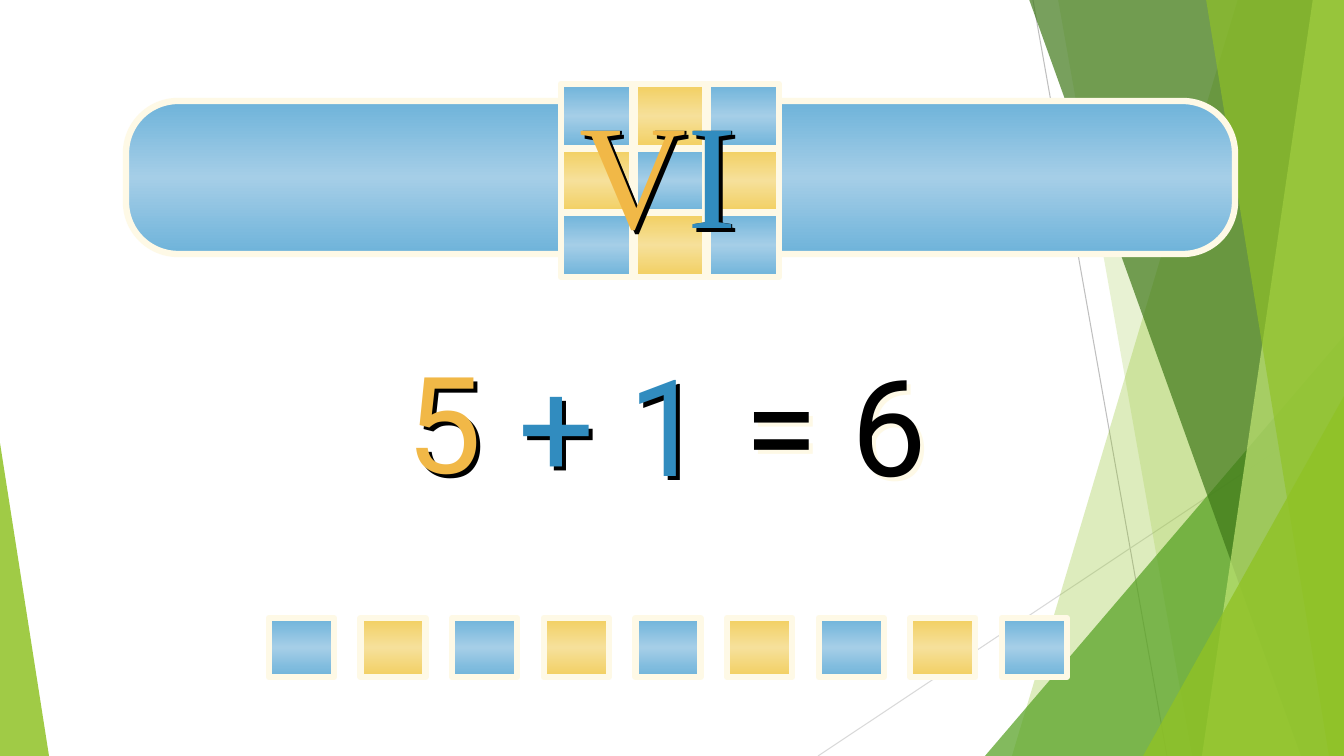
from copy import deepcopy
from lxml.etree import SubElement as Sub
from pptx import Presentation
from pptx.dml.color import RGBColor
from pptx.enum.shapes import MSO_CONNECTOR as Link, MSO_SHAPE as Kind
from pptx.enum.text import MSO_ANCHOR as Anchor, MSO_AUTO_SIZE as Auto, PP_ALIGN as Align
from pptx.oxml.ns import qn
from pptx.util import Emu, Pt

UNIT = 914400 / 100.8
WIDE, HIGH = 1344, 756
BLUE, GOLD = ("6EB3DA", "A5CEE7"), ("F2CF60", "F6E09A")
CREAM, BLACK, AMBER, AZURE = "FEF9E6", "000000", "F1B847", "318CBF"
LIME, GREEN, DARK, PALE = "90C226", "54A021", "3F7819", "C0E474"
SERIF, SANS = "Times New Roman", "Roboto"


def px(*nums):
    """Turn pixel lengths into EMU."""
    return [Emu(round(n * UNIT)) for n in nums]


def hue(code):
    """Turn a hex string into a colour."""
    return RGBColor.from_string(code)


def tint(shape, code, alpha):
    """Give a shape a see-through fill without an outline."""
    shape.shadow.inherit = False
    shape.fill.solid()
    shape.fill.fore_color.rgb = hue(code)
    tone = shape._element.spPr.find(".//" + qn("a:srgbClr"))
    Sub(tone, qn("a:alpha"), val=str(alpha * 1000))
    shape.line.fill.background()


def ray(slide, ends, code):
    """Draw one thin line between two points."""
    line = slide.shapes.add_connector(Link.STRAIGHT, *px(*ends))
    line.line.color.rgb = hue(code)
    line.line.width = Pt(0.75)
    Sub(line._element.spPr, qn("a:effectLst"))


def shard(slide, top, base, code, alpha):
    """Draw a band from a slanted left edge to the right slide edge."""
    pen = slide.shapes.build_freeform(top, -1, scale=UNIT)
    pen.add_line_segments([(WIDE, -1), (WIDE, HIGH), (base, HIGH)], close=True)
    tint(pen.convert_to_shape(), code, alpha)


def wedge(slide, box, tip, code, alpha):
    """Draw a triangle whose tip sits at a share of its width."""
    shape = slide.shapes.add_shape(Kind.ISOSCELES_TRIANGLE, *px(*box))
    shape.adjustments[0] = tip
    tint(shape, code, alpha)


def decor(slide):
    """Draw the green facets along the slide edges."""
    ray(slide, (1033, 0, 1167, HIGH), "BFBFBF")
    ray(slide, (WIDE, 406, 818, HIGH), "D9D9D9")
    shard(slide, 1238, 1012, LIME, 30)
    shard(slide, 1058, 1192, LIME, 20)
    wedge(slide, (985, 336, 359, 420), 1, GREEN, 72)
    shard(slide, 1029, 1301, DARK, 70)
    shard(slide, 1313, 1202, PALE, 70)
    shard(slide, 1206, 1329, LIME, 65)
    wedge(slide, (1143, 396, 201, 360), 1, LIME, 80)
    wedge(slide, (0, 443, 49, 313), 0, LIME, 85)


def tile(slide, kind, box, pair):
    """Draw a glossy shape with a cream outline."""
    shape = slide.shapes.add_shape(kind, *px(*box))
    shape.shadow.inherit = False
    shape.fill.gradient()
    stops = shape._element.spPr.find(".//" + qn("a:gsLst"))
    stops.insert(1, deepcopy(stops[0]))
    edge, mid = pair
    for stop, code, spot in zip(shape.fill.gradient_stops, (edge, mid, edge), (0, 0.5, 1)):
        stop.color.rgb = hue(code)
        stop.position = spot
    shape.fill.gradient_angle = 90
    shape.line.color.rgb = hue(CREAM)
    shape.line.width = Pt(4.5)
    return shape


def tiles(slide, box, cols, rows, size):
    """Spread tiles of alternating colour evenly over a box."""
    left, top, wide, high = box
    gap_x = (wide - size[0]) / max(cols - 1, 1)
    gap_y = (high - size[1]) / max(rows - 1, 1)
    for row in range(rows):
        for col in range(cols):
            spot = (left + col * gap_x, top + row * gap_y)
            tile(slide, Kind.RECTANGLE, spot + size, (BLUE, GOLD)[(row + col) % 2])


def style(shape, text, face, size, code):
    """Set the text of a shape and format it."""
    frame = shape.text_frame
    frame.text = text
    frame.word_wrap = False
    frame.auto_size = Auto.SHAPE_TO_FIT_TEXT
    frame.vertical_anchor = Anchor.TOP
    frame.paragraphs[0].alignment = Align.LEFT
    font = frame.paragraphs[0].runs[0].font
    font.name = face
    font.size = Pt(size)
    font.color.rgb = hue(code)


def label(slide, box, text, face, size, code, shade=BLACK):
    """Add a text box with one formatted run and a hard shadow."""
    shape = slide.shapes.add_textbox(*px(*box))
    style(shape, text, face, size, code)
    cast = Sub(Sub(shape._element.spPr, qn("a:effectLst")), qn("a:outerShdw"),
               dist="50800", dir="2700000", algn="tl", rotWithShape="0")
    Sub(cast, qn("a:srgbClr"), val=shade)


def banner(slide, box):
    """Draw the wide bar with the tiled numeral in its middle."""
    left, top, wide, high = box
    bar = tile(slide, Kind.ROUNDED_RECTANGLE, box, BLUE)
    bar.adjustments[0] = 0.34
    tiles(slide, (left + 435, top - 17, 218, 193), 3, 3, (71, 64))
    title = slide.shapes.title
    slide.shapes._spTree.append(title._element)
    title.left, title.top, title.width, title.height = px(left + 445, top - 26, 185, 188)
    style(title, "VI", SERIF, 106, BLACK)
    label(slide, (left + 444, top - 26, 127, 188), "V", SERIF, 106, AMBER)
    label(slide, (left + 552, top - 26, 71, 188), "I", SERIF, 106, AZURE)


def sums(slide, box):
    """Write the coloured sum across a box."""
    left, top, wide, high = box
    label(slide, (left, top - 3, 95, high), "5", SANS, 96, AMBER)
    label(slide, (left + 112, top, 211, high), "+ 1", SANS, 96, AZURE)
    label(slide, (left + 338, top, 211, high), "= 6", SANS, 96, BLACK, CREAM)


def main():
    """Build and save the slide."""
    deck = Presentation()
    deck.slide_width, deck.slide_height = px(WIDE, HIGH)
    slide = deck.slides.add_slide(deck.slide_layouts[5])
    decor(slide)
    banner(slide, (126, 101, 1109, 153))
    tiles(slide, (269, 618, 798, 59), 9, 1, (65, 59))
    sums(slide, (397, 337, 549, 171))
    deck.save("out.pptx")


if __name__ == "__main__":
    main()
